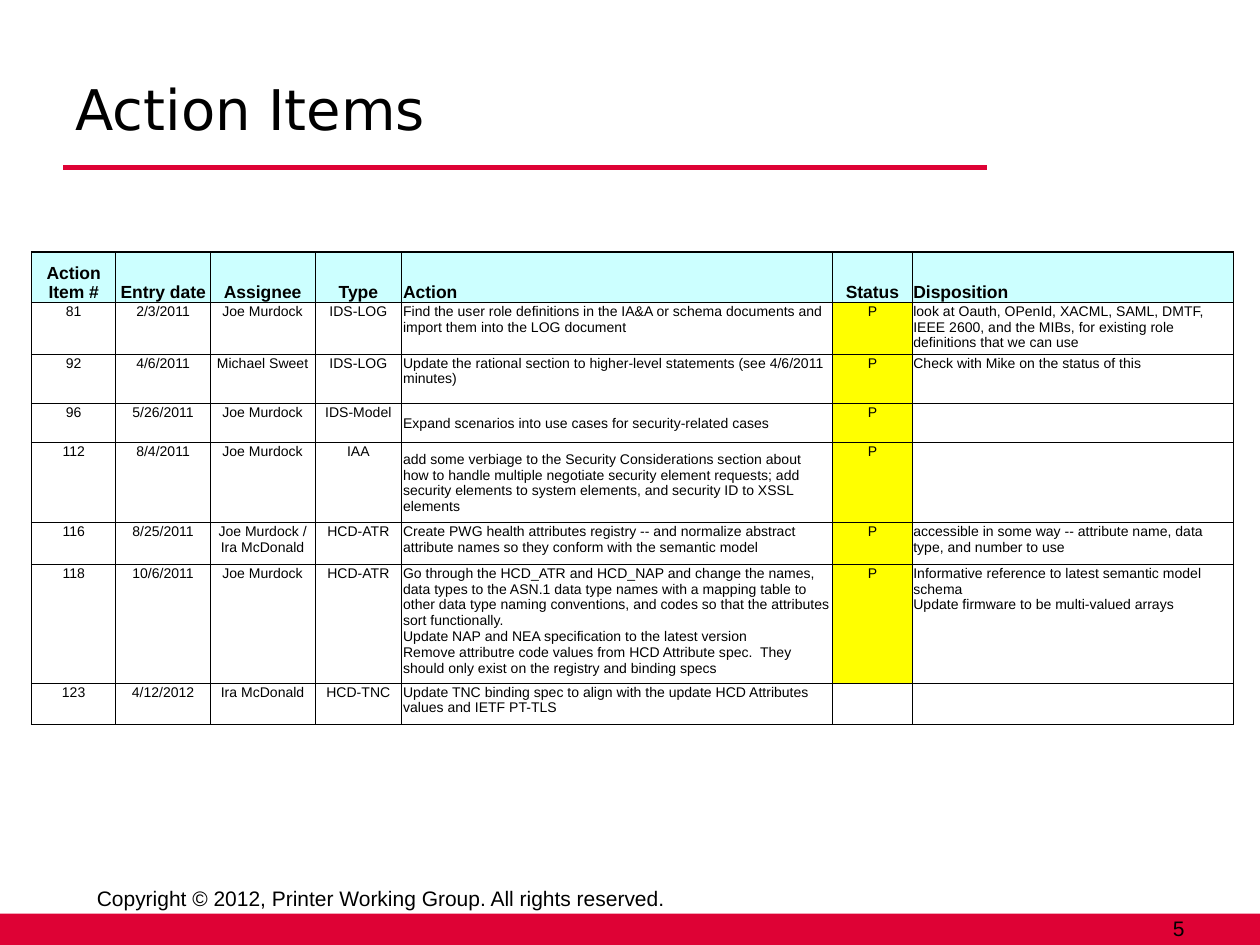
from lxml import etree
from pptx import Presentation
from pptx.dml.color import RGBColor
from pptx.enum import shapes, text
from pptx.oxml import ns
from pptx.util import Inches, Pt

BLACK = RGBColor(0x00, 0x00, 0x00)
RED = RGBColor(0xDE, 0x02, 0x35)
PALE_CYAN = RGBColor(0xCC, 0xFF, 0xFF)
YELLOW = RGBColor(0xFF, 0xFF, 0x00)
WHITE = RGBColor(0xFF, 0xFF, 0xFF)

COLUMN_WIDTHS = [0.67, 0.75, 0.83, 0.69, 3.42, 0.63, 2.55]
ROW_HEIGHTS = [0.4, 0.39, 0.39, 0.3, 0.64, 0.33, 0.89, 0.33]
ACTION, STATUS, DISPOSITION = 4, 5, 6
MIDDLE_ACTION_ITEMS = ("96", "112")

HEADER = ["Action Item #", "Entry date", "Assignee", "Type", "Action", "Status", "Disposition"]
ITEMS = [
    ["81", "2/3/2011", "Joe Murdock", "IDS-LOG",
     "Find the user role definitions in the IA&A or schema documents and import them "
     "into the LOG document", "P",
     "look at Oauth, OPenId, XACML, SAML, DMTF, IEEE 2600, and the MIBs, for existing "
     "role definitions that we can use"],
    ["92", "4/6/2011", "Michael Sweet", "IDS-LOG",
     "Update the rational section to higher-level statements (see 4/6/2011 minutes)", "P",
     "Check with Mike on the status of this"],
    ["96", "5/26/2011", "Joe Murdock", "IDS-Model",
     "Expand scenarios into use cases for security-related cases", "P", ""],
    ["112", "8/4/2011", "Joe Murdock", "IAA",
     "add some verbiage to the Security Considerations section about how to handle "
     "multiple negotiate security element requests; add security elements to system "
     "elements, and security ID to XSSL elements", "P", ""],
    ["116", "8/25/2011", "Joe Murdock / Ira McDonald", "HCD-ATR",
     "Create PWG health attributes registry -- and normalize abstract attribute names "
     "so they conform with the semantic model", "P",
     "accessible in some way -- attribute name, data type, and number to use"],
    ["118", "10/6/2011", "Joe Murdock", "HCD-ATR",
     "Go through the HCD_ATR and HCD_NAP and change the names, data types to the ASN.1 "
     "data type names with a mapping table to other data type naming conventions, and "
     "codes so that the attributes sort functionally.\v"
     "Update NAP and NEA specification to the latest version\v"
     "Remove attributre code values from HCD Attribute spec.  They should only exist on "
     "the registry and binding specs", "P",
     "Informative reference to latest semantic model schema\v"
     "Update firmware to be multi-valued arrays"],
    ["123", "4/12/2012", "Ira McDonald", "HCD-TNC",
     "Update TNC binding spec to align with the update HCD Attributes values and IETF PT-TLS",
     "", ""],
]


def format_runs(paragraph, size, font="Arial", bold=False):
    for run in paragraph.runs:
        run.font.name = font
        run.font.size = Pt(size)
        run.font.bold = bold
        run.font.color.rgb = BLACK


def add_label(slide, left, top, width, height, words, size, font="Arial",
              alignment=text.PP_ALIGN.LEFT):
    box = slide.shapes.add_textbox(Inches(left), Inches(top), Inches(width), Inches(height))
    frame = box.text_frame
    frame.word_wrap = True
    frame.vertical_anchor = text.MSO_ANCHOR.MIDDLE
    frame.text = words
    frame.paragraphs[0].alignment = alignment
    format_runs(frame.paragraphs[0], size, font)


def add_heading(slide, left, top, width, height):
    """Title with a red rule along the bottom of its box."""
    add_label(slide, left, top, width, height, "Action Items", 32, "DejaVu Sans")
    rule_y = Inches(top + height)
    rule = slide.shapes.add_connector(
        shapes.MSO_CONNECTOR.STRAIGHT, Inches(left), rule_y, Inches(left + 7.33), rule_y)
    rule.line.color.rgb = RED
    rule.line.width = Pt(3)
    etree.SubElement(rule._element.spPr, ns.qn("a:effectLst"))


def add_footer(slide, left, top, width, height):
    """Red band with the copyright line above it and the page number on it."""
    band = slide.shapes.add_shape(
        shapes.MSO_SHAPE.RECTANGLE, Inches(left), Inches(top), Inches(width), Inches(height))
    band.shadow.inherit = False
    band.fill.solid()
    band.fill.fore_color.rgb = RED
    band.line.fill.background()
    add_label(slide, left + 7.17, top - 0.01, 2.33, height, "5", 12,
              alignment=text.PP_ALIGN.RIGHT)
    add_label(slide, left + 0.67, top - height, 4.92, height,
              "Copyright © 2012, Printer Working Group. All rights reserved.", 12)


def set_borders(cell, widths):
    """Draw black edges; widths maps an edge (L, R, T, B) to points, in schema order."""
    properties = cell._tc.get_or_add_tcPr()
    for edge, width in widths.items():
        line = etree.SubElement(properties, ns.qn(f"a:ln{edge}"), w=str(Pt(width)))
        fill = etree.SubElement(line, ns.qn("a:solidFill"))
        etree.SubElement(fill, ns.qn("a:srgbClr"), val=str(BLACK))


def fill_cell(cell, color):
    if color is None:
        cell.fill.background()
    else:
        cell.fill.solid()
        cell.fill.fore_color.rgb = color


def cell_color(row, column, words):
    if row == 0:
        return PALE_CYAN
    if column == STATUS:
        return YELLOW if words else WHITE
    return None


def cell_anchor(row, column, item):
    if row == 0:
        return text.MSO_ANCHOR.BOTTOM
    if column == ACTION and item in MIDDLE_ACTION_ITEMS:
        return text.MSO_ANCHOR.MIDDLE
    return text.MSO_ANCHOR.TOP


def add_action_table(slide, left, top):
    rows = [HEADER] + ITEMS
    table = slide.shapes.add_table(
        len(rows), len(HEADER), Inches(left), Inches(top),
        Inches(sum(COLUMN_WIDTHS)), Inches(sum(ROW_HEIGHTS))).table
    table.first_row = False
    table.horz_banding = False
    for column, width in zip(table.columns, COLUMN_WIDTHS):
        column.width = Inches(width)
    for row, height in zip(table.rows, ROW_HEIGHTS):
        row.height = Inches(height)

    for r, row in enumerate(rows):
        for c, words in enumerate(row):
            cell = table.cell(r, c)
            cell.margin_left = cell.margin_right = cell.margin_top = Inches(0.01)
            cell.margin_bottom = 0
            cell.vertical_anchor = cell_anchor(r, c, row[0])
            set_borders(cell, {"L": 1 if c == 0 else 0.5,
                               "R": 1 if c == DISPOSITION else 0.5,
                               "T": 1 if r == 0 else 0.5,
                               "B": 0.5})
            fill_cell(cell, cell_color(r, c, words))
            paragraph = cell.text_frame.paragraphs[0]
            if words:
                paragraph.text = words
            if c not in (ACTION, DISPOSITION):
                paragraph.alignment = text.PP_ALIGN.CENTER
            format_runs(paragraph, 10 if r == 0 else 8, bold=r == 0)


def main():
    presentation = Presentation()
    presentation.slide_width = Inches(10)
    presentation.slide_height = Inches(7.5)
    slide = presentation.slides.add_slide(presentation.slide_layouts[6])
    add_footer(slide, 0, 7.25, 10, 0.25)
    add_heading(slide, 0.5, 0.38, 7.25, 0.95)
    add_action_table(slide, 0.25, 2)
    presentation.save("out.pptx")


if __name__ == "__main__":
    main()
